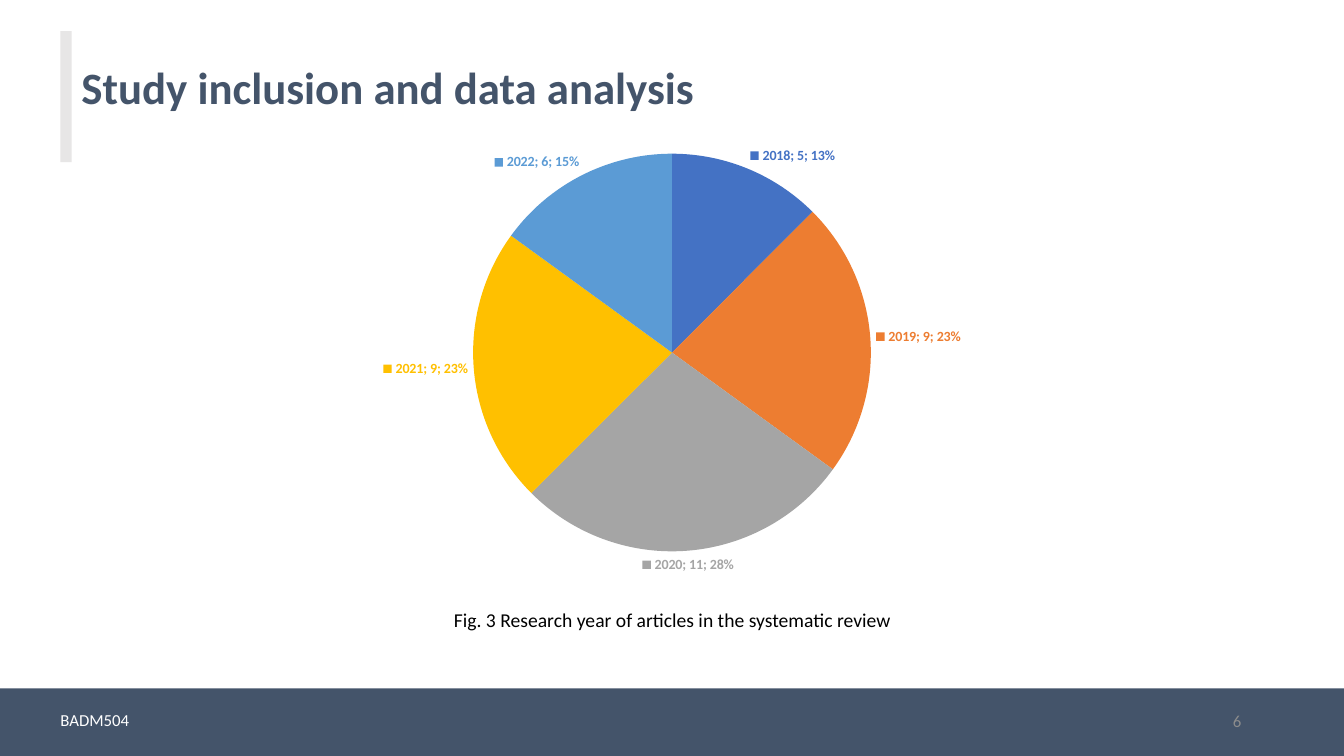
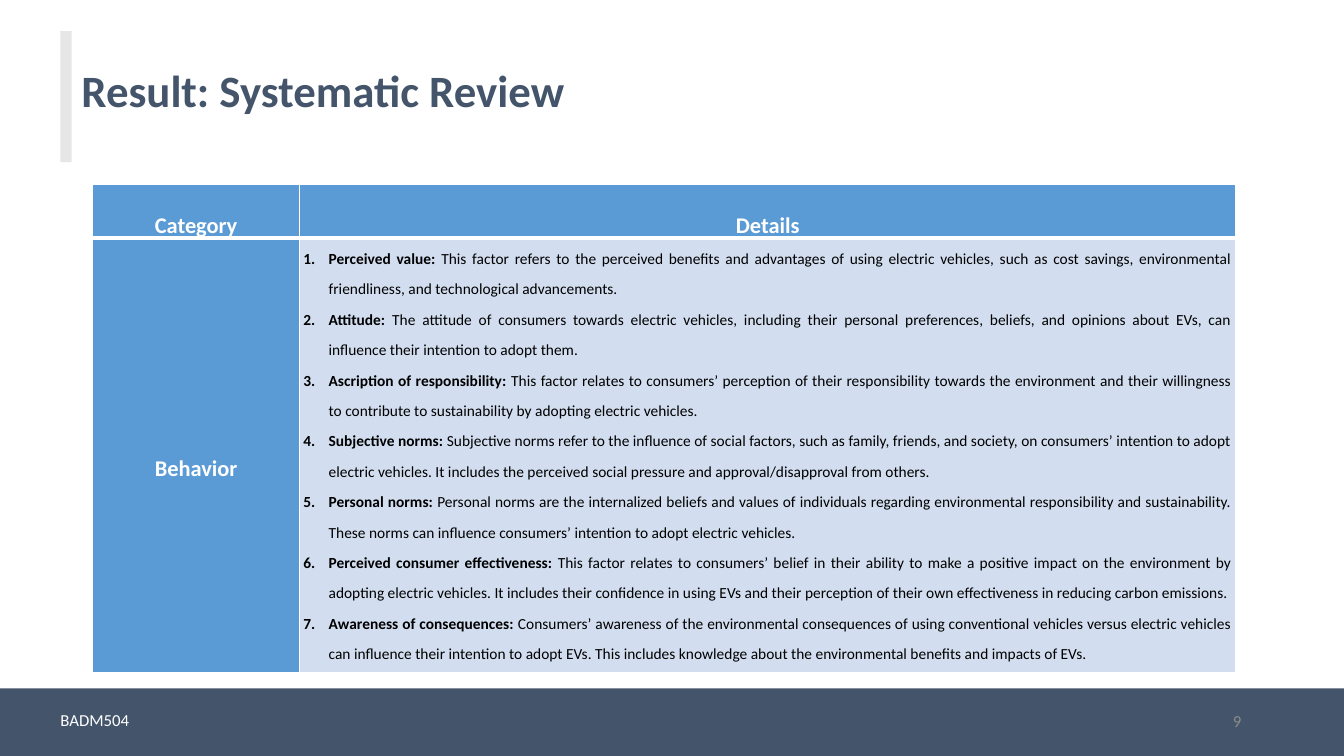
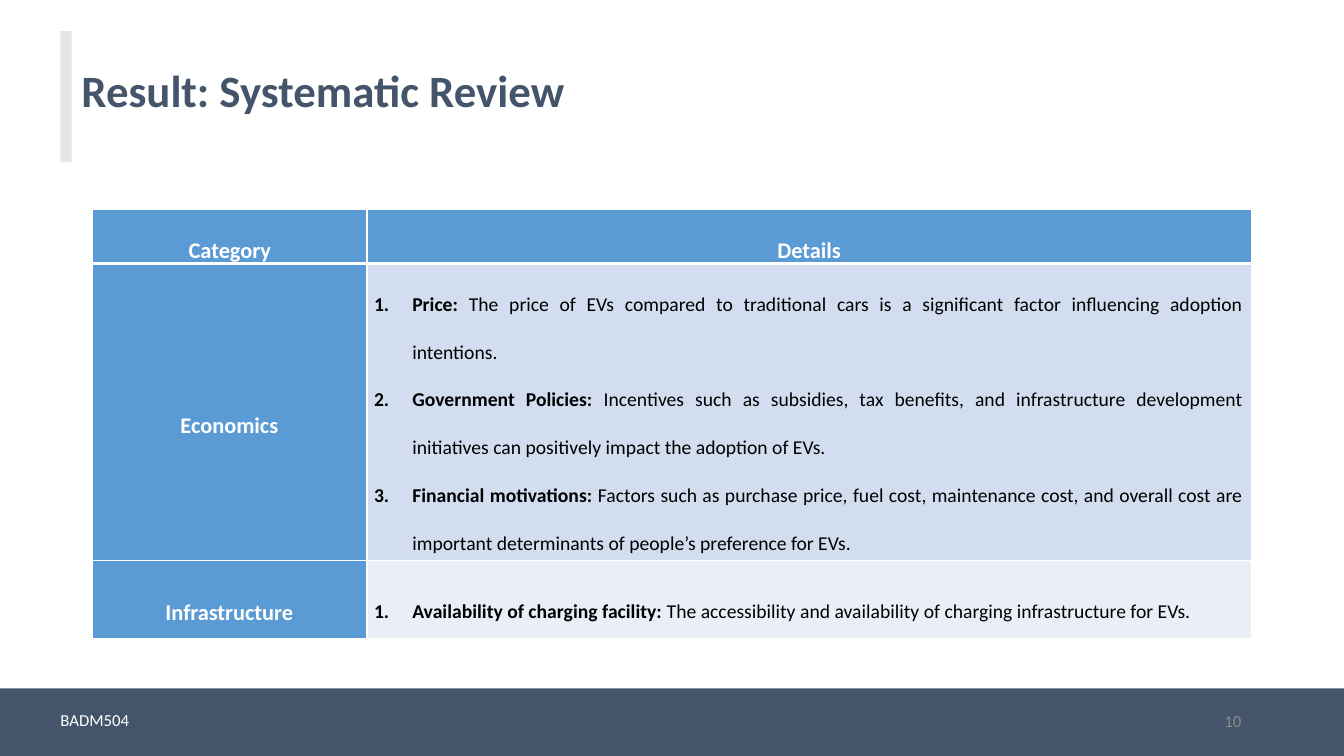
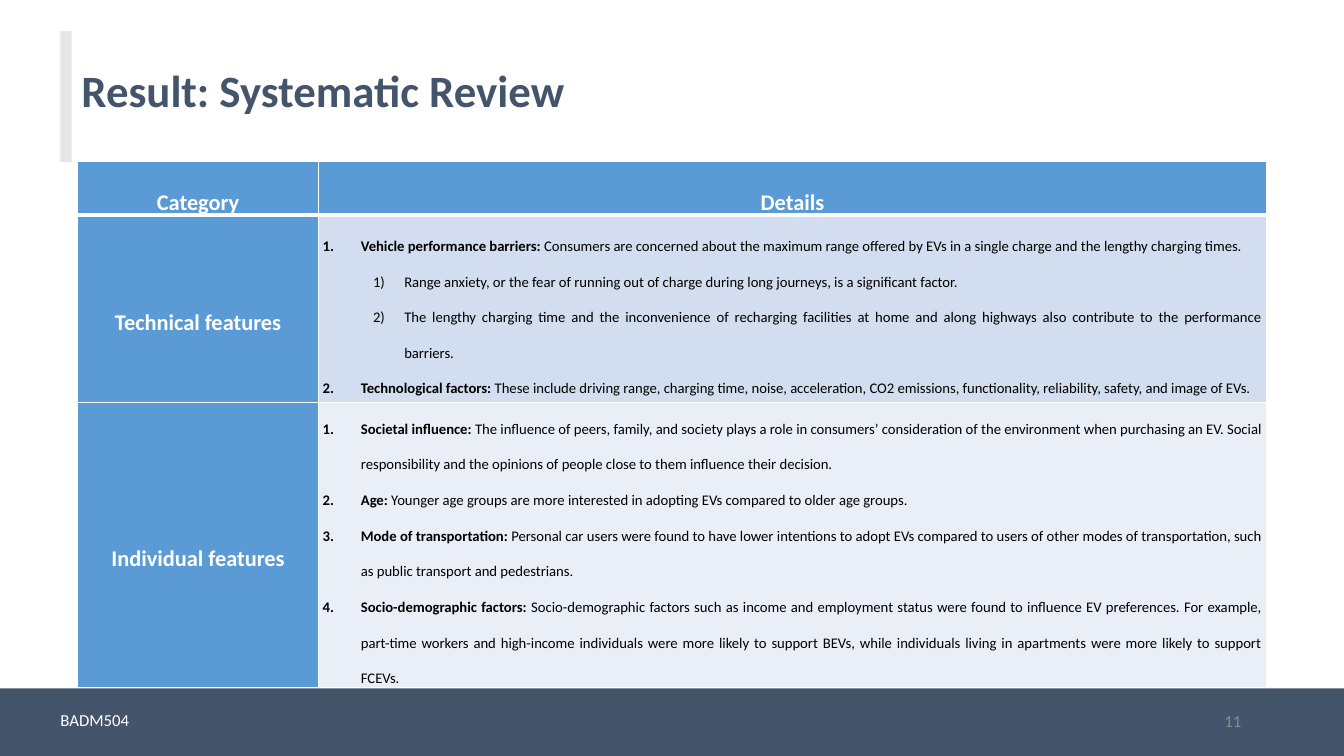
import pptx
import pptx.chart.data
import pptx.dml.color
import pptx.enum.chart
import pptx.enum.shapes
import pptx.enum.text
import pptx.oxml.ns
import pptx.util
import lxml.etree

Inches = pptx.util.Inches
Pt = pptx.util.Pt
RGBColor = pptx.dml.color.RGBColor
Align = pptx.enum.text.PP_ALIGN
Anchor = pptx.enum.text.MSO_ANCHOR
qn = pptx.oxml.ns.qn

# Shared look
FONT = "Calibri"
NAVY = RGBColor(0x44, 0x54, 0x6A)
PALE_GRAY = RGBColor(0xE7, 0xE6, 0xE6)
PAGE_GRAY = RGBColor(0x8C, 0x8C, 0x8C)
WHITE = RGBColor(0xFF, 0xFF, 0xFF)
BLACK = RGBColor(0x00, 0x00, 0x00)
BLUE = RGBColor(0x5B, 0x9B, 0xD5)
ROW_FILLS = [RGBColor(0xD2, 0xDE, 0xEF), RGBColor(0xEA, 0xEF, 0xF7)]
PIE_COLORS = [RGBColor(0x44, 0x72, 0xC4), RGBColor(0xED, 0x7D, 0x31),
              RGBColor(0xA5, 0xA5, 0xA5), RGBColor(0xFF, 0xC0, 0x00), BLUE]

# Content: an item is (bold lead, text); an empty lead marks a sub-item
REVIEW = "Result: Systematic Review"
PAGES = [
    {"number": 6, "title": "Study inclusion and data analysis", "title_top": 0.27},
    {"number": 9, "title": REVIEW, "title_top": 0.3,
     "table": {
         "left": 0.92, "top": 1.83, "columns": [2.05, 9.29], "heights": [0.47, 4.31],
         "size": 11, "spacing": 1.6, "indent": 0.25, "margins": (0.04, 0.04),
         "anchor": Anchor.TOP,
         "rows": [
             ("Behavior", [
                 ("Perceived value: ", "This factor refers to the perceived benefits and advantages of using electric vehicles, such as cost savings, environmental friendliness, and technological advancements."),
                 ("Attitude: ", "The attitude of consumers towards electric vehicles, including their personal preferences, beliefs, and opinions about EVs, can influence their intention to adopt them."),
                 ("Ascription of responsibility: ", "This factor relates to consumers’ perception of their responsibility towards the environment and their willingness to contribute to sustainability by adopting electric vehicles."),
                 ("Subjective norms:", " Subjective norms refer to the influence of social factors, such as family, friends, and society, on consumers’ intention to adopt electric vehicles. It includes the perceived social pressure and approval/disapproval from others."),
                 ("Personal norms: ", "Personal norms are the internalized beliefs and values of individuals regarding environmental responsibility and sustainability. These norms can influence consumers’ intention to adopt electric vehicles."),
                 ("Perceived consumer effectiveness: ", "This factor relates to consumers’ belief in their ability to make a positive impact on the environment by adopting electric vehicles. It includes their confidence in using EVs and their perception of their own effectiveness in reducing carbon emissions."),
                 ("Awareness of consequences: ", "Consumers’ awareness of the environmental consequences of using conventional vehicles versus electric vehicles can influence their intention to adopt EVs. This includes knowledge about the environmental benefits and impacts of EVs."),
             ]),
         ]}},
    {"number": 10, "title": REVIEW, "title_top": 0.3,
     "table": {
         "left": 0.92, "top": 2.08, "columns": [2.72, 8.77], "heights": [0.46, 2.95, 0.77],
         "size": 14, "spacing": 2.0, "indent": 0.38, "margins": (0.07, 0.08),
         "anchor": Anchor.MIDDLE,
         "rows": [
             ("Economics", [
                 ("Price: ", "The price of EVs compared to traditional cars is a significant factor influencing adoption intentions."),
                 ("Government Policies: ", "Incentives such as subsidies, tax benefits, and infrastructure development initiatives can positively impact the adoption of EVs."),
                 ("Financial motivations: ", "Factors such as purchase price, fuel cost, maintenance cost, and overall cost are important determinants of people’s preference for EVs."),
             ]),
             ("Infrastructure", [
                 ("Availability of charging facility: ", "The accessibility and availability of charging infrastructure for EVs."),
             ]),
         ]}},
    {"number": 11, "title": REVIEW, "title_top": 0.3,
     "table": {
         "left": 0.77, "top": 1.6, "columns": [2.39, 9.4], "heights": [0.47, 1.86, 2.83],
         "size": 10.5, "spacing": 2.0, "indent": 0.38, "margins": (0.04, 0.04),
         "anchor": Anchor.MIDDLE,
         "rows": [
             ("Technical features", [
                 ("Vehicle performance barriers: ", "Consumers are concerned about the maximum range offered by EVs in a single charge and the lengthy charging times."),
                 ("", "Range anxiety, or the fear of running out of charge during long journeys, is a significant factor."),
                 ("", "The lengthy charging time and the inconvenience of recharging facilities at home and along highways also contribute to the performance barriers."),
                 ("Technological factors: ", "These include driving range, charging time, noise, acceleration, CO2 emissions, functionality, reliability, safety, and image of EVs."),
             ]),
             ("Individual features", [
                 ("Societal influence: ", "The influence of peers, family, and society plays a role in consumers’ consideration of the environment when purchasing an EV. Social responsibility and the opinions of people close to them influence their decision."),
                 ("Age:", " Younger age groups are more interested in adopting EVs compared to older age groups."),
                 ("Mode of transportation: ", "Personal car users were found to have lower intentions to adopt EVs compared to users of other modes of transportation, such as public transport and pedestrians."),
                 ("Socio-demographic factors: ", "Socio-demographic factors such as income and employment status were found to influence EV preferences. For example, part-time workers and high-income individuals were more likely to support BEVs, while individuals living in apartments were more likely to support FCEVs."),
             ]),
         ]}},
]


def add_span(para, text, size, color, bold=False):
    span = para.add_run()
    span.text = text
    span.font.name = FONT
    span.font.size = Pt(size)
    span.font.bold = bold
    span.font.color.rgb = color


def add_text(page, area, text, size, color, bold=False, align=Align.LEFT,
             spacing=1.0, anchor=Anchor.MIDDLE):
    box = page.shapes.add_textbox(*[Inches(length) for length in area])
    box.text_frame.word_wrap = True
    box.text_frame.vertical_anchor = anchor
    para = box.text_frame.paragraphs[0]
    para.alignment = align
    para.line_spacing = spacing
    add_span(para, text, size, color, bold)


deck = pptx.Presentation()
deck.slide_width = Inches(13.33)
deck.slide_height = Inches(7.5)

for content in PAGES:
    page = deck.slides.add_slide(deck.slide_layouts[6])

    # Title bar and footer band
    for area, color in [((0.6, 0.31, 0.11, 1.3), PALE_GRAY),
                        ((0, 6.83, 13.33, 0.67), NAVY)]:
        band = page.shapes.add_shape(pptx.enum.shapes.MSO_SHAPE.RECTANGLE,
                                     *[Inches(length) for length in area])
        band.shadow.inherit = False
        band.fill.solid()
        band.fill.fore_color.rgb = color
        band.line.fill.background()

    # Title, course code and page number
    add_text(page, (0.71, content["title_top"], 11.34, 1.3), content["title"],
             32, NAVY, bold=True, spacing=0.7)
    add_text(page, (0.5, 6.95, 8.92, 0.4), "BADM504", 12, WHITE, spacing=0.9)
    add_text(page, (9.41, 6.95, 3, 0.4), str(content["number"]), 12, PAGE_GRAY,
             align=Align.RIGHT)

    if "table" not in content:
        # Pie chart of research years
        data = pptx.chart.data.CategoryChartData()
        data.categories = ["2018", "2019", "2020", "2021", "2022"]
        data.add_series("Series 1", [5, 9, 11, 9, 6])
        chart = page.shapes.add_chart(
            pptx.enum.chart.XL_CHART_TYPE.PIE, Inches(3.34), Inches(1.25),
            Inches(6.65), Inches(4.57), data).chart
        chart.has_title = False
        chart.has_legend = False
        chart.font.name = FONT
        chart.font.size = Pt(10)
        chart.font.color.rgb = BLACK
        chart.plots[0].vary_by_categories = True
        series = chart.plots[0].series[0]
        for index, color in enumerate(PIE_COLORS):
            point = series.points[index]
            point.format.fill.solid()
            point.format.fill.fore_color.rgb = color
            point.format.line.fill.background()
            label = point.data_label
            label.font.name = FONT
            label.font.size = Pt(10)
            label.font.bold = True
            label.font.color.rgb = color
            label.position = pptx.enum.chart.XL_LABEL_POSITION.OUTSIDE_END

        # Labels show key, category, value and percentage
        for name in ("showLegendKey", "showVal", "showCatName", "showPercent"):
            for flag in chart.element.iter(qn("c:" + name)):
                flag.set("val", "1")
        for flag in list(chart.element.iter(qn("c:showBubbleSize"))):
            separator = lxml.etree.Element(qn("c:separator"))
            separator.text = "; "
            flag.addnext(separator)

        add_text(page, (3.55, 5.75, 6.24, 0.5),
                 "Fig. 3 Research year of articles in the systematic review",
                 14, BLACK, align=Align.CENTER, spacing=2.0, anchor=Anchor.TOP)
        continue

    # Table grid
    layout = content["table"]
    rows = [("Category", "Details")] + layout["rows"]
    table = page.shapes.add_table(
        len(rows), 2, Inches(layout["left"]), Inches(layout["top"]),
        Inches(sum(layout["columns"])), Inches(sum(layout["heights"]))).table
    table.first_row = False
    table.horz_banding = False
    for column, width in zip(table.columns, layout["columns"]):
        column.width = Inches(width)
    for row, height in zip(table.rows, layout["heights"]):
        row.height = Inches(height)

    for row_index, row in enumerate(rows):
        for column_index, entry in enumerate(row):
            cell = table.cell(row_index, column_index)
            is_header = row_index == 0
            is_heading = is_header or column_index == 0
            cell.vertical_anchor = Anchor.MIDDLE if is_heading else layout["anchor"]
            left, right = (0.04, 0.04) if is_header else layout["margins"]
            cell.margin_left = Inches(left)
            cell.margin_right = Inches(right)
            cell.margin_top = cell.margin_bottom = 0

            # White borders, thicker under the header
            properties = cell._tc.get_or_add_tcPr()
            for side in ("lnL", "lnR", "lnT", "lnB"):
                thick = is_header and side == "lnB"
                border = lxml.etree.SubElement(properties, qn("a:" + side),
                                               w=str(Pt(3 if thick else 1)))
                paint = lxml.etree.SubElement(border, qn("a:solidFill"))
                lxml.etree.SubElement(paint, qn("a:srgbClr"), val=str(WHITE))
            cell.fill.solid()
            cell.fill.fore_color.rgb = BLUE if is_heading else ROW_FILLS[row_index - 1]

            if is_heading:
                para = cell.text_frame.paragraphs[0]
                para.alignment = Align.CENTER
                para.line_spacing = 2.0
                add_span(para, entry, 16, WHITE, bold=True)
                continue

            # Numbered details
            for item_index, (lead, text) in enumerate(entry):
                frame = cell.text_frame
                para = frame.add_paragraph() if item_index else frame.paragraphs[0]
                indent, hanging, numbering = layout["indent"], layout["indent"], "arabicPeriod"
                if not lead:
                    para.level = 1
                    indent, hanging, numbering = 0.81, 0.31, "arabicParenR"
                style = para._p.get_or_add_pPr()
                style.set("marL", str(Inches(indent)))
                style.set("indent", str(-Inches(hanging)))
                lxml.etree.SubElement(style, qn("a:buAutoNum"), type=numbering)
                para.alignment = Align.JUSTIFY
                para.line_spacing = layout["spacing"]
                if lead:
                    add_span(para, lead, layout["size"], BLACK, bold=True)
                add_span(para, text, layout["size"], BLACK)

deck.save("out.pptx")
